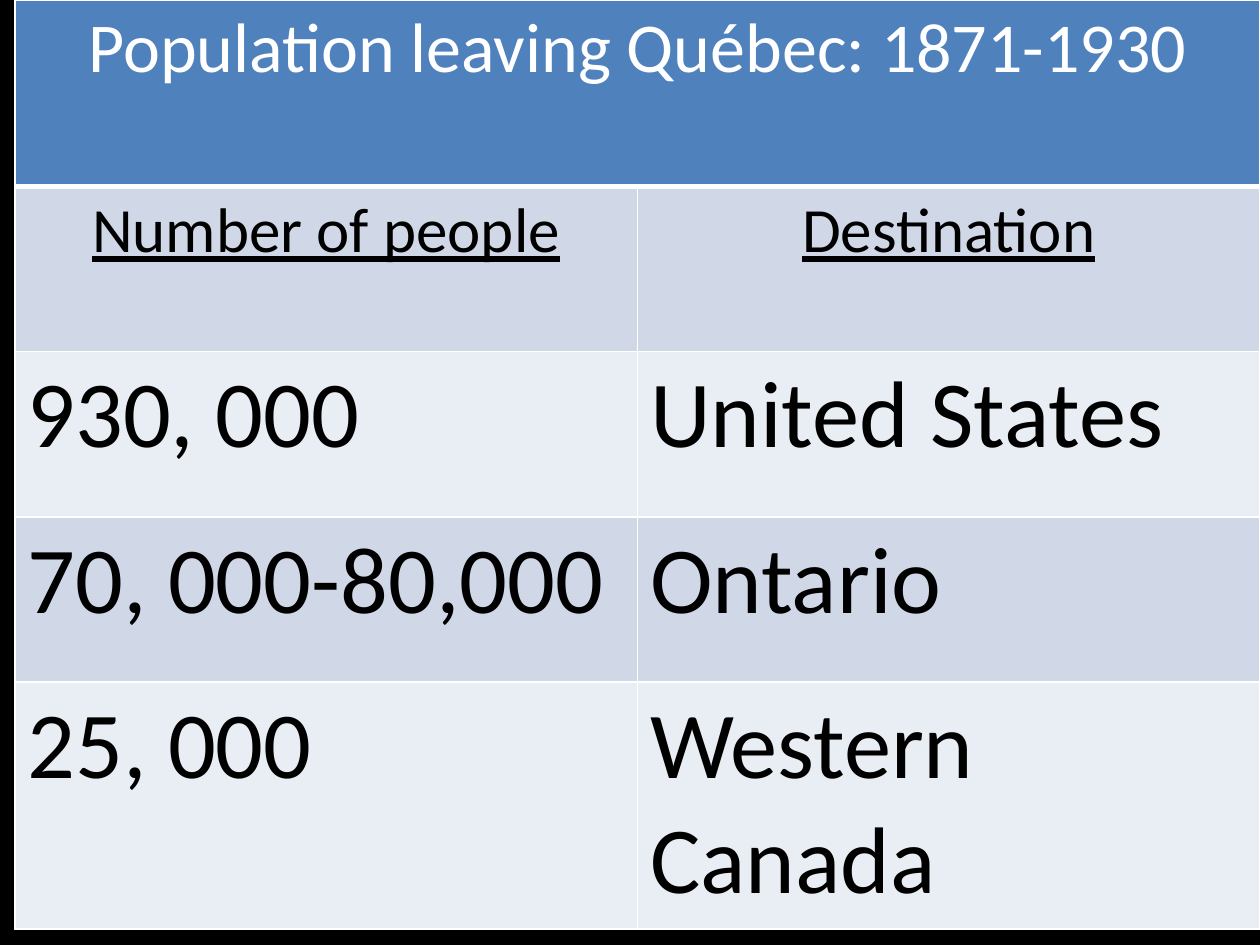
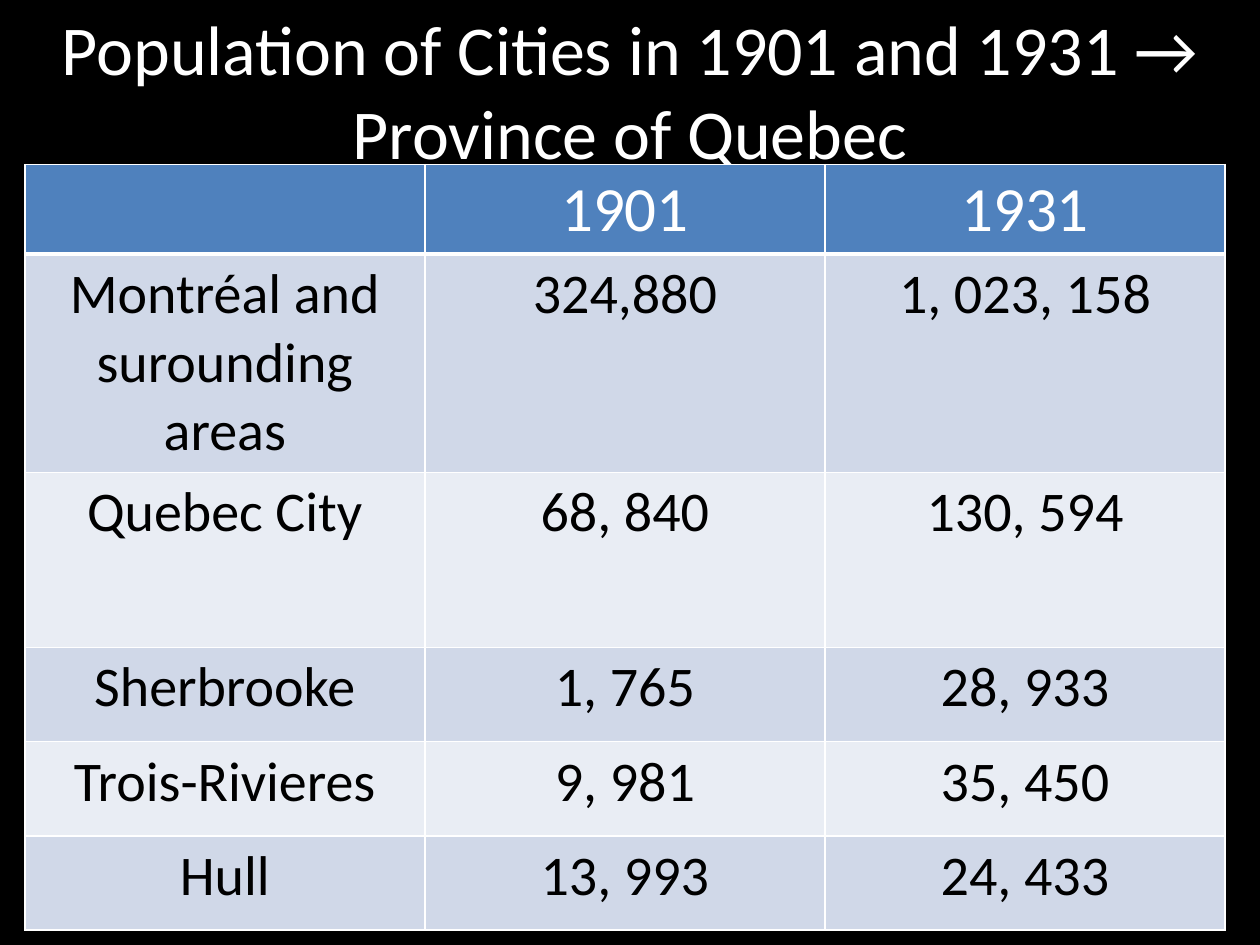
from lxml.etree import SubElement
from pptx import Presentation
from pptx.dml.color import RGBColor
from pptx.enum.text import MSO_ANCHOR as Anchor, PP_ALIGN as Align
from pptx.oxml.ns import qn
from pptx.util import Cm, Pt

FONT = "Calibri"
BLACK, WHITE = "000000", "FFFFFF"
HEADER_FILL = "4F81BD"
BAND_FILLS = ("D0D8E8", "E9EDF4")
SLIDE_WIDTH, SLIDE_HEIGHT = 25.4, 19.05

LEAVING_TITLE = "Population leaving Québec: 1871-1930"
LEAVING_HEADINGS = ("Number of people", "Destination")
LEAVING_ROWS = (
    ("930, 000", "United States"),
    ("70, 000-80,000", "Ontario"),
    ("25, 000", "Western Canada"),
)
CITIES_TITLE = "Population of Cities in 1901 and 1931 → Province of Quebec"
CITIES_HEADINGS = ("", "1901", "1931")
CITIES_ROWS = (
    ("Montréal and surounding areas", "324,880", "1, 023, 158"),
    ("Quebec City", "68, 840", "130, 594"),
    ("Sherbrooke", "1, 765", "28, 933"),
    ("Trois-Rivieres", "9, 981", "35, 450"),
    ("Hull", "13, 993", "24, 433"),
)


def color(hex_code):
    return RGBColor.from_string(hex_code)


def write(text_frame, text, size=32, font_color=BLACK, align=Align.CENTER, underline=None):
    paragraph = text_frame.paragraphs[0]
    paragraph.alignment = align
    if not text:
        return
    run = paragraph.add_run()
    run.text = text
    run.font.name = FONT
    run.font.size = Pt(size)
    run.font.underline = underline
    run.font.color.rgb = color(font_color)


def set_borders(cell, bottom=1):
    """Draw white cell borders, 1 pt except for the bottom one."""
    properties = cell._tc.get_or_add_tcPr()
    for side, width in (("L", 1), ("R", 1), ("T", 1), ("B", bottom)):
        line = SubElement(properties, qn(f"a:ln{side}"), w=str(Pt(width)))
        fill = SubElement(line, qn("a:solidFill"))
        SubElement(fill, qn("a:srgbClr"), val=WHITE)


def add_banded_table(slide, left, top, width, row_heights, column_count):
    """Add an empty table with equal columns, a header row and banded rows."""
    table = slide.shapes.add_table(
        len(row_heights), column_count,
        Cm(left), Cm(top), Cm(width), Cm(sum(row_heights)),
    ).table
    for column in table.columns:
        column.width = Cm(width / column_count)
    for index, (row, height) in enumerate(zip(table.rows, row_heights)):
        row.height = Cm(height)
        is_header = index == 0
        for cell in row.cells:
            set_borders(cell, bottom=3 if is_header else 1)
            cell.fill.solid()
            fill = HEADER_FILL if is_header else BAND_FILLS[(index - 1) % 2]
            cell.fill.fore_color.rgb = color(fill)
    return table


def fill_row(table, row_index, texts, **text_format):
    for column_index, text in enumerate(texts):
        write(table.cell(row_index, column_index).text_frame, text, **text_format)


def add_black_slide(presentation):
    slide = presentation.slides.add_slide(presentation.slide_layouts[6])
    slide.background.fill.solid()
    slide.background.fill.fore_color.rgb = color(BLACK)
    return slide


def add_title(slide, text, left, top, width, height):
    text_frame = slide.shapes.add_textbox(Cm(left), Cm(top), Cm(width), Cm(height)).text_frame
    text_frame.word_wrap = True
    text_frame.vertical_anchor = Anchor.MIDDLE
    write(text_frame, text, size=40, font_color=WHITE)


def add_leaving_slide(presentation):
    slide = add_black_slide(presentation)
    heights = (3.76, 3.33, 3.33, 3.33, 4.98)
    table = add_banded_table(slide, 0.3, 0, SLIDE_WIDTH - 0.3, heights, 2)
    table.cell(0, 0).merge(table.cell(0, 1))
    fill_row(table, 0, [LEAVING_TITLE], size=40, font_color=WHITE)
    fill_row(table, 1, LEAVING_HEADINGS, size=36, underline=True)
    for index, texts in enumerate(LEAVING_ROWS, start=2):
        fill_row(table, index, texts, size=54, align=Align.LEFT)


def add_cities_slide(presentation):
    slide = add_black_slide(presentation)
    add_title(slide, CITIES_TITLE, 0, 0.1, SLIDE_WIDTH, 3.4)
    heights = (1.8, 4.4, 3.53, 1.9, 1.9, 1.9)
    table = add_banded_table(slide, 0.5, 3.32, 24.2, heights, 3)
    fill_row(table, 0, CITIES_HEADINGS, size=36, font_color=WHITE)
    for index, texts in enumerate(CITIES_ROWS, start=1):
        fill_row(table, index, texts)


def main():
    presentation = Presentation()
    presentation.slide_width = Cm(SLIDE_WIDTH)
    presentation.slide_height = Cm(SLIDE_HEIGHT)
    add_leaving_slide(presentation)
    add_cities_slide(presentation)
    presentation.save("out.pptx")


if __name__ == "__main__":
    main()
